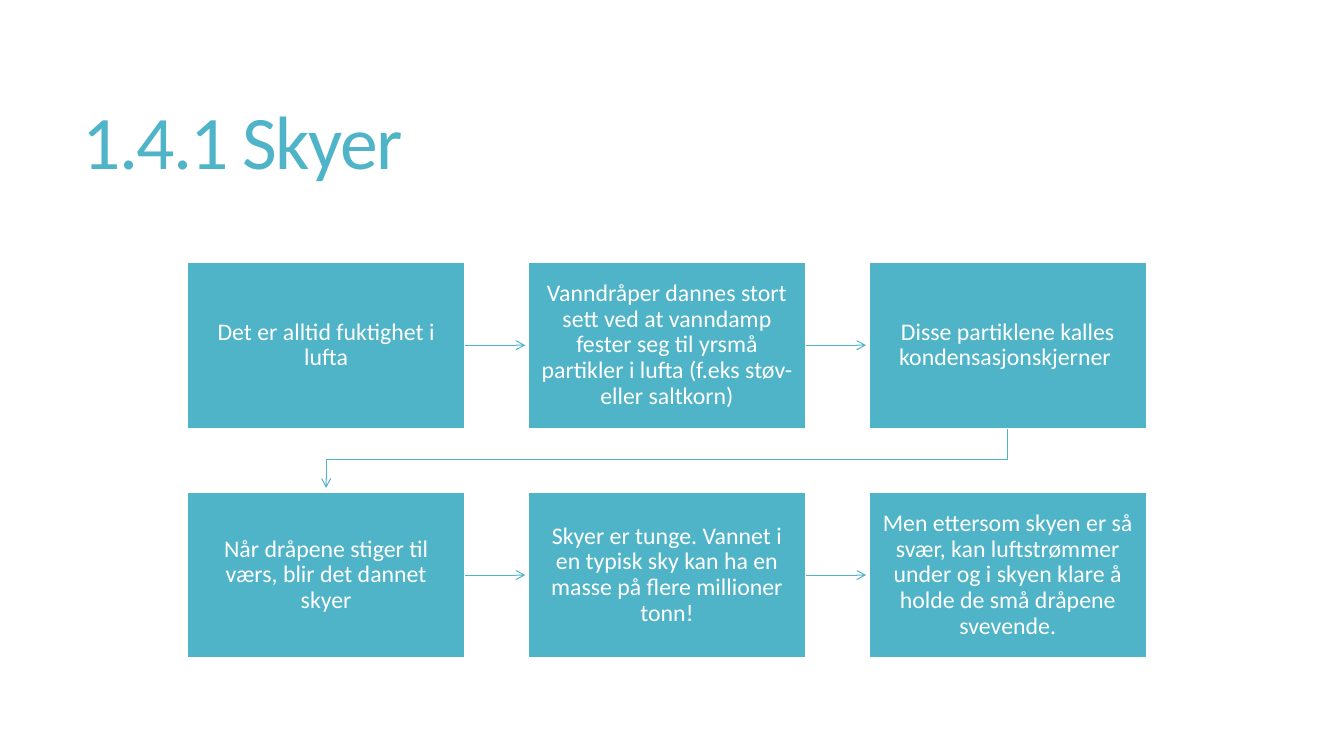
from dataclasses import dataclass

from lxml import etree
from pptx import Presentation
from pptx import util as u
from pptx.dml.color import RGBColor
from pptx.enum import shapes, text
from pptx.oxml.ns import qn


@dataclass(frozen=True)
class Theme:
    """Colours, font and type sizes of the slide."""
    teal: RGBColor = RGBColor.from_string("50B4C8")
    white: RGBColor = RGBColor.from_string("FFFFFF")
    font: str = "Calibri"
    head: int = 54
    body: int = 17
    track: int = -120


class Deck:
    """Draws the elements of a flow chart on the current slide."""

    def __init__(self, prs, theme):
        self.theme = theme
        self.slide = prs.slides.add_slide(prs.slide_layouts[6])

    def label(self, shape, words, size, color, lead, align, pads):
        frame = shape.text_frame
        sides = {f"margin_{side}": u.Inches(pad) for side, pad in pads.items()}
        look = {"word_wrap": True, "vertical_anchor": text.MSO_ANCHOR.MIDDLE, **sides}
        for name, value in look.items():
            setattr(frame, name, value)
        para = frame.paragraphs[0]
        para.alignment = align
        para.line_spacing = lead
        run = para.add_run()
        run.text = words
        for name, value in {"name": self.theme.font, "size": u.Pt(size)}.items():
            setattr(run.font, name, value)
        run.font.color.rgb = color

    def title(self, words, *rect):
        box = self.slide.shapes.add_textbox(*map(u.Inches, rect))
        self.label(box, words, self.theme.head, self.theme.teal, 0.85,
                   text.PP_ALIGN.LEFT, {})
        for props in box.element.iter(qn("a:rPr")):
            props.set("spc", str(self.theme.track))

    def card(self, words, *rect):
        box = self.slide.shapes.add_shape(
            shapes.MSO_SHAPE.RECTANGLE, *map(u.Inches, rect))
        box.shadow.inherit = False
        box.fill.solid()
        box.fill.fore_color.rgb = self.theme.teal
        box.line.color.rgb = self.theme.white
        box.line.width = u.Pt(1)
        pads = {"left": 0.13, "right": 0.13, "top": 0.14, "bottom": 0.14}
        self.label(box, words, self.theme.body, self.theme.white, 0.9,
                   text.PP_ALIGN.CENTER, pads)

    def tip(self, line):
        line.line.color.rgb = self.theme.teal
        line.line.width = u.Pt(0.75)
        props = line.element.spPr
        etree.SubElement(props.find(qn("a:ln")), qn("a:tailEnd"), type="arrow")
        etree.SubElement(props, qn("a:effectLst"))

    def arrow(self, *ends):
        self.tip(self.slide.shapes.add_connector(
            shapes.MSO_CONNECTOR.STRAIGHT, *map(u.Inches, ends)))

    def bend(self, *spots):
        first, *rest = [tuple(map(u.Inches, spot)) for spot in spots]
        pen = self.slide.shapes.build_freeform(*first)
        pen.add_line_segments(rest, close=False)
        line = pen.convert_to_shape()
        line.fill.background()
        self.tip(line)


STEPS = [
    ["Det er alltid fuktighet i lufta",
     "Vanndråper dannes stort sett ved at vanndamp fester seg til yrsmå "
     "partikler i lufta (f.eks støv-eller saltkorn)",
     "Disse partiklene kalles kondensasjonskjerner "],
    ["Når dråpene stiger til værs, blir det dannet skyer",
     "Skyer er tunge. Vannet i en typisk sky kan ha en masse på flere "
     "millioner tonn!",
     "Men ettersom skyen er så svær, kan luftstrømmer under og i skyen klare å "
     "holde de små dråpene svevende."],
]
LEFT, TOP, WIDE, HIGH = 1.86, 2.6, 2.75, 1.65
STEP, DROP, REACH = 3.38, 2.28, 0.6


def main():
    prs = Presentation()
    prs.slide_width, prs.slide_height = u.Inches(13.33), u.Inches(7.5)
    deck = Deck(prs, Theme())
    deck.title("1.4.1 Skyer", 0.72, 0.55, 11.78, 1.81)
    start, end = LEFT + 2 * STEP + WIDE / 2, LEFT + WIDE / 2
    base = TOP + HIGH
    deck.bend((start, base), (start, base + 0.31),
              (end, base + 0.31), (end, base + 0.59))
    for row, line in enumerate(STEPS):
        y = TOP + row * DROP
        for col, words in enumerate(line):
            x = LEFT + col * STEP
            if col < len(line) - 1:
                edge, mid = x + WIDE, y + HIGH / 2
                deck.arrow(edge, mid, edge + REACH, mid)
            deck.card(words, x, y, WIDE, HIGH)
    prs.save("out.pptx")


if __name__ == "__main__":
    main()
